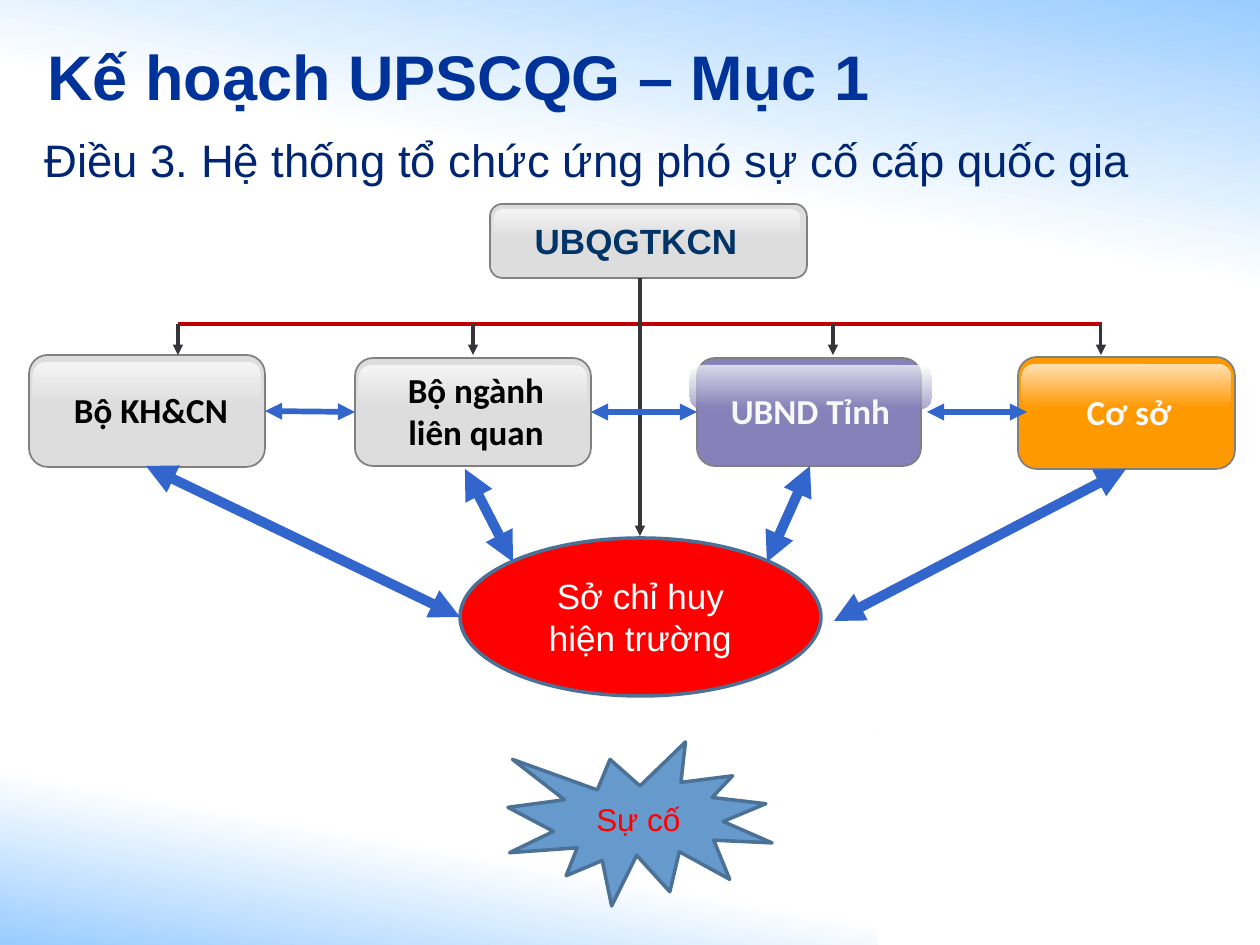
from lxml.etree import SubElement
from pptx import Presentation
from pptx.dml.color import RGBColor
from pptx.enum.shapes import MSO_CONNECTOR as Connector, MSO_SHAPE as Shape
from pptx.enum.text import MSO_ANCHOR as Anchor, PP_ALIGN as Align
from pptx.oxml import parse_xml
from pptx.oxml.ns import nsdecls, qn
from pptx.util import Pt

SCALE = 914400 / 126
WHITE = RGBColor(0xFF, 0xFF, 0xFF)
BLACK = RGBColor(0, 0, 0)
SKY = RGBColor(0x99, 0xCC, 0xFF)
NAVY = RGBColor(0x00, 0x33, 0x99)
DEEP_NAVY = RGBColor(0x00, 0x26, 0x73)
TEAL_NAVY = RGBColor(0x00, 0x33, 0x66)
SILVER = RGBColor(0xDD, 0xDD, 0xDD)
GREY = RGBColor(0x80, 0x80, 0x80)
CHARCOAL = RGBColor(0x35, 0x35, 0x39)
PALE = RGBColor(0xF8, 0xF8, 0xF8)
PURPLE = RGBColor(0x86, 0x81, 0xB8)
ORANGE = RGBColor(0xFF, 0x99, 0x00)
RED = RGBColor(0xFF, 0, 0)
DARK_RED = RGBColor(0xC0, 0, 0)
STEEL = RGBColor(0x66, 0x99, 0xCC)
STEEL_EDGE = RGBColor(0x4B, 0x71, 0x97)
BLUE = RGBColor(0x33, 0x66, 0xCC)


def px(length):
    """Turn pixels into EMU."""
    return round(length * SCALE)


def add_box(page, kind, area, fill=None, edge=None, width=1, corner=None):
    """Add a preset shape without shadow."""
    box = page.shapes.add_shape(kind, *map(px, area))
    box.shadow.inherit = False
    if corner is not None:
        box.adjustments[0] = corner
    if fill is not None:
        box.fill.solid()
        box.fill.fore_color.rgb = fill
    if edge is None:
        box.line.fill.background()
    else:
        box.line.color.rgb = edge
        box.line.width = Pt(width)
    return box


def shade(box, start, end, angle, stop=1.0, alpha=None):
    """Fill a shape with a two-colour linear gradient."""
    box.fill.gradient()
    box.fill.gradient_angle = angle
    for mark, color, position in zip(box.fill.gradient_stops, (start, end), (0, stop)):
        mark.color.rgb = color
        mark.position = position
    if alpha is not None:
        for color in box.fill._xPr.iter(qn("a:srgbClr")):
            SubElement(color, qn("a:alpha"), val=str(alpha * 1000))


def write(box, text, size, color, font="Arial", bold=False, align=Align.CENTER,
          anchor=Anchor.MIDDLE, shadow=False):
    """Write one formatted paragraph into a shape or text box."""
    frame = box.text_frame
    frame.word_wrap = True
    frame.vertical_anchor = anchor
    para = frame.paragraphs[0]
    para.alignment = align
    span = para.add_run()
    span.text = text
    span.font.size = Pt(size)
    span.font.bold = bold
    span.font.name = font
    span.font.color.rgb = color
    if shadow:
        span._r.rPr.find(qn("a:solidFill")).addnext(parse_xml(
            f'<a:effectLst {nsdecls("a")}><a:outerShdw dist="35921" dir="2700000">'
            '<a:srgbClr val="000000"/></a:outerShdw></a:effectLst>'))


def add_text(page, area, text, size, color, **style):
    """Add a text box."""
    write(page.shapes.add_textbox(*map(px, area)), text, size, color, **style)


def add_node(page, area, gloss, fill, label, text, color, **style):
    """Add a glossy rounded box with its label."""
    add_box(page, Shape.ROUNDED_RECTANGLE, area, fill, GREY, corner=0.167)
    shine = add_box(page, Shape.ROUNDED_RECTANGLE, gloss, corner=0.284)
    shade(shine, WHITE, fill, 270, alpha=70)
    add_text(page, label, text, 20, color, bold=True, anchor=Anchor.TOP, **style)


def add_line(page, start, end, color, width, head=False, tail=False):
    """Add a straight line with optional arrowheads."""
    line = page.shapes.add_connector(Connector.STRAIGHT, *map(px, start + end))
    line.line.color.rgb = color
    line.line.width = Pt(width)
    stroke = line.line._get_or_add_ln()
    for shown, tag in ((head, "a:headEnd"), (tail, "a:tailEnd")):
        if shown:
            SubElement(stroke, qn(tag), type="triangle")
    SubElement(line._element.spPr, qn("a:effectLst"))


def add_background(page):
    """Add the two sky gradients."""
    bottom = add_box(page, Shape.RECTANGLE, (0, 731, 878, 214))
    shade(bottom, SKY, WHITE, 80, stop=0.48)
    top = add_box(page, Shape.RECTANGLE, (0, 0, 1260, 294))
    shade(top, SKY, WHITE, 260, stop=0.56)


def add_nodes(page):
    """Add the committee, its four members, the command post and the incident."""
    add_node(page, (490, 204, 317, 74), (494, 209, 306, 30), SILVER,
             (507, 213, 258, 55), "UBQGTKCN", TEAL_NAVY)
    members = (
        ((29, 355, 236, 112), (33, 362, 228, 45), SILVER,
         (50, 382, 202, 55), "Bộ KH&CN", BLACK, False),
        ((355, 358, 236, 108), (359, 365, 228, 44), SILVER,
         (375, 362, 202, 97), "Bộ ngành liên quan", BLACK, False),
        ((697, 358, 224, 108), (690, 365, 242, 44), PURPLE,
         (689, 383, 243, 55), "UBND Tỉnh", PALE, True),
        ((1018, 357, 217, 112), (1022, 364, 209, 45), ORANGE,
         (1008, 384, 242, 55), "Cơ sở", PALE, True),
    )
    for *parts, shadow in members:
        add_node(page, *parts, font="Calibri", shadow=shadow)
    post = add_box(page, Shape.OVAL, (460, 538, 361, 158), RED, STEEL_EDGE, 2)
    write(post, "Sở chỉ huy hiện trường", 20, WHITE)
    incident = add_box(page, Shape.EXPLOSION1, (508, 742, 264, 164), STEEL, STEEL_EDGE, 2)
    write(incident, "Sự cố", 18, RED)


def add_links(page):
    """Add the command lines and the two-way coordination arrows."""
    add_line(page, (178, 324), (1102, 324), DARK_RED, 2.5)
    for x in (178, 473, 833, 1101):
        add_line(page, (x, 324), (x, 355), CHARCOAL, 1.75, tail=True)
    add_line(page, (640, 278), (640, 536), CHARCOAL, 1.75, tail=True)
    for start, end in (((265, 411), (355, 412)), ((591, 412), (697, 412)),
                       ((927, 412), (1027, 412))):
        add_line(page, start, end, BLUE, 3.25, head=True, tail=True)
    for start, end in (((146, 466), (460, 617)), ((834, 621), (1126, 469)),
                       ((767, 562), (810, 466)), ((513, 562), (465, 469))):
        add_line(page, start, end, BLUE, 5.75, head=True, tail=True)


def main():
    """Build and save the slide."""
    deck = Presentation()
    deck.slide_width, deck.slide_height = px(1260), px(945)
    page = deck.slides.add_slide(deck.slide_layouts[6])
    add_background(page)
    add_text(page, (35, 16, 932, 118), "Kế hoạch UPSCQG – Mục 1", 36, NAVY,
             bold=True, align=Align.LEFT)
    add_text(page, (32, 126, 1228, 88),
             "Điều 3. Hệ thống tổ chức ứng phó sự cố cấp quốc gia", 26, DEEP_NAVY,
             align=Align.LEFT, anchor=Anchor.TOP)
    add_nodes(page)
    add_links(page)
    deck.save("out.pptx")


if __name__ == "__main__":
    main()
